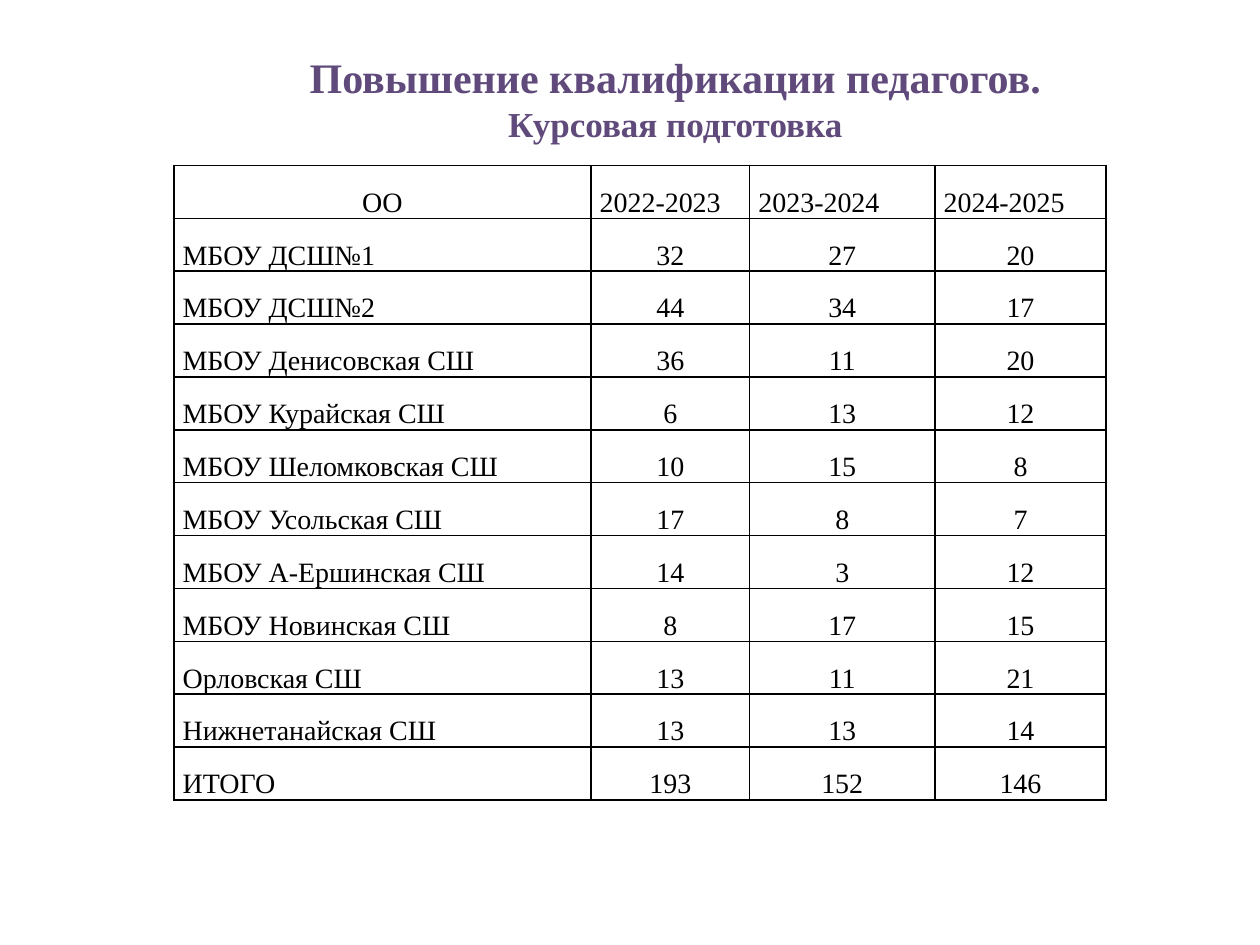
"""Build a slide on teacher training courses by school and year."""
from dataclasses import dataclass
from typing import Optional

from lxml.etree import SubElement
from pptx import Presentation
from pptx.dml.color import RGBColor
from pptx.enum.text import MSO_ANCHOR, MSO_AUTO_SIZE, PP_ALIGN
from pptx.oxml.ns import qn
from pptx.util import Inches, Pt

WIDE, HIGH = Inches(10), Inches(7.5)
PURPLE = RGBColor(0x60, 0x4A, 0x7B)
BLACK = RGBColor(0, 0, 0)
FONT = "Times New Roman"
ROW = HIGH * 0.056
COLS = (0.331, 0.126, 0.147, 0.136)
HEAD = ("ОО", "2022-2023", "2023-2024", "2024-2025")


@dataclass(frozen=True)
class School:
    """Hold a school's name and its yearly counts."""
    name: str
    counts: tuple[int, ...]


@dataclass(frozen=True)
class Style:
    """Hold the look of a run of text."""
    size: int
    color: RGBColor
    bold: bool = False


SCHOOLS = (
    School("МБОУ ДСШ№1", (32, 27, 20)),
    School("МБОУ ДСШ№2", (44, 34, 17)),
    School("МБОУ Денисовская СШ", (36, 11, 20)),
    School("МБОУ Курайская СШ", (6, 13, 12)),
    School("МБОУ Шеломковская СШ", (10, 15, 8)),
    School("МБОУ Усольская СШ", (17, 8, 7)),
    School("МБОУ А-Ершинская СШ", (14, 3, 12)),
    School("МБОУ Новинская СШ", (8, 17, 15)),
    School("Орловская СШ", (13, 11, 21)),
    School("Нижнетанайская СШ", (13, 13, 14)),
)
TOTAL = School("ИТОГО", tuple(map(sum, zip(*(s.counts for s in SCHOOLS)))))
BODY = Style(16, BLACK)
TITLE = (
    ("Повышение квалификации педагогов.", Style(24, PURPLE, True)),
    ("Курсовая подготовка", Style(20, PURPLE, True)),
)


def write(para, text: str, style: Style, align: Optional[PP_ALIGN]) -> None:
    """Add one styled run to a paragraph."""
    para.alignment = align
    run = para.add_run()
    run.text = text
    font = run.font
    font.name, font.size, font.bold = FONT, Pt(style.size), style.bold
    font.color.rgb = style.color


def border(cell) -> None:
    """Draw a thin black line on each side of a cell."""
    props = cell._tc.get_or_add_tcPr()
    for spot, side in enumerate(("lnL", "lnR", "lnT", "lnB")):
        line = props.makeelement(qn(f"a:{side}"), {"w": str(Pt(1))})
        fill = SubElement(line, qn("a:solidFill"))
        SubElement(fill, qn("a:srgbClr"), val=str(BLACK))
        props.insert(spot, line)


def put(cell, text: str, align: PP_ALIGN) -> None:
    """Fill one cell with text at its foot."""
    cell.fill.background()
    border(cell)
    cell.vertical_anchor = MSO_ANCHOR.BOTTOM
    cell.margin_left = cell.margin_right = Inches(0.07)
    cell.margin_top = cell.margin_bottom = 0
    para = cell.text_frame.paragraphs[0]
    para.line_spacing = 1.15
    write(para, text, BODY, align)


def draw_title(slide) -> None:
    """Place and fill the title."""
    title = slide.shapes.title
    title.left, title.top = int(WIDE * 0.146), int(HIGH * 0.048)
    title.width, title.height = int(WIDE * 0.78), int(HIGH * 0.112)
    frame = title.text_frame
    frame.word_wrap = True
    frame.auto_size = MSO_AUTO_SIZE.SHAPE_TO_FIT_TEXT
    frame.vertical_anchor = MSO_ANCHOR.TOP
    for spot, (text, style) in enumerate(TITLE):
        para = frame.add_paragraph() if spot else frame.paragraphs[0]
        write(para, text, style, PP_ALIGN.CENTER)


def draw_table(slide) -> None:
    """Draw the counts with a head row and a total row."""
    rows = [HEAD, *((s.name, *map(str, s.counts)) for s in (*SCHOOLS, TOTAL))]
    table = slide.shapes.add_table(
        len(rows), len(COLS), int(WIDE * 0.138), int(HIGH * 0.175),
        int(WIDE * sum(COLS)), int(ROW * len(rows))).table
    table.first_row = table.horz_banding = False
    for col, share in zip(table.columns, COLS):
        col.width = int(WIDE * share)
    for r, texts in enumerate(rows):
        table.rows[r].height = int(ROW)
        for c, text in enumerate(texts):
            center = (r == 0) == (c == 0)
            align = PP_ALIGN.CENTER if center else PP_ALIGN.LEFT
            put(table.cell(r, c), text, align)


def main() -> None:
    """Build and save the slide."""
    deck = Presentation()
    deck.slide_width, deck.slide_height = WIDE, HIGH
    slide = deck.slides.add_slide(deck.slide_layouts.get_by_name("Title Only"))
    draw_title(slide)
    draw_table(slide)
    deck.save("out.pptx")


if __name__ == "__main__":
    main()
